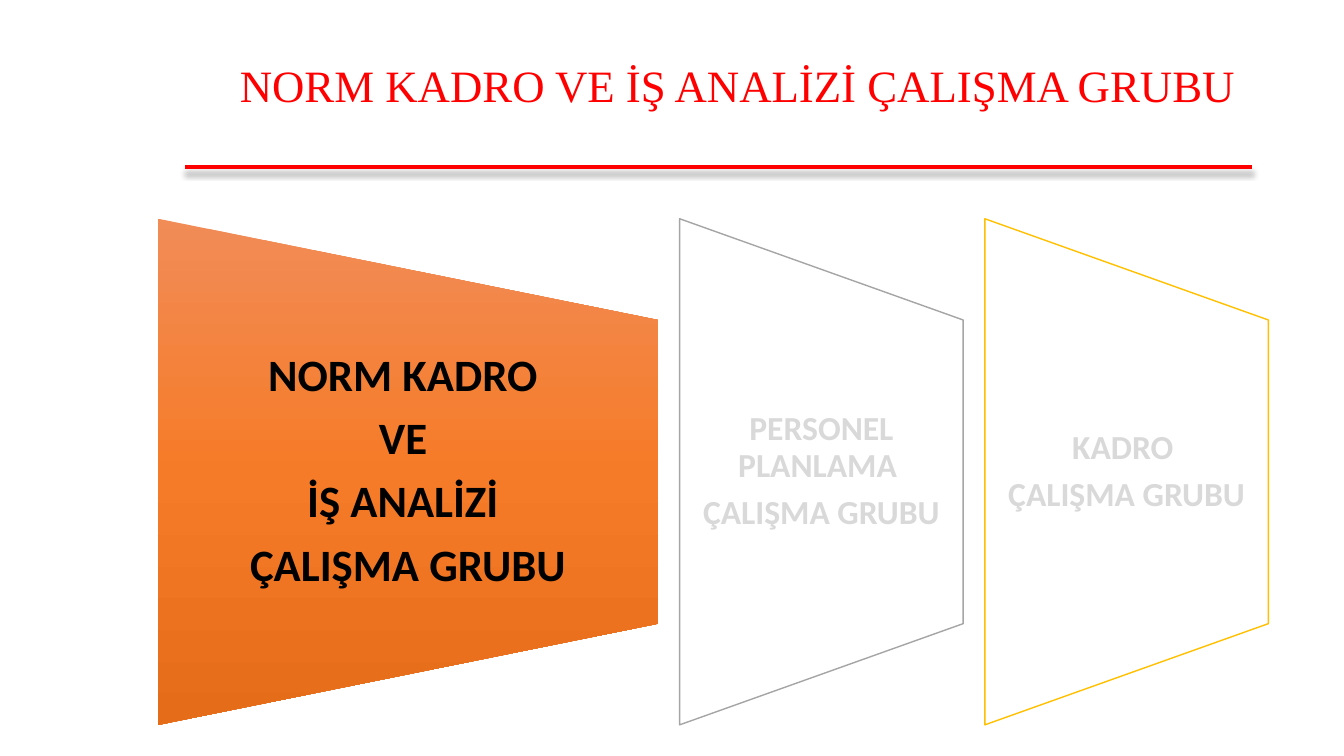
from lxml.etree import SubElement
from pptx import Presentation
from pptx.dml.color import RGBColor
from pptx.enum.shapes import MSO_CONNECTOR, MSO_SHAPE
from pptx.enum.text import MSO_ANCHOR, MSO_AUTO_SIZE, PP_ALIGN
from pptx.oxml.ns import qn
from pptx.util import Pt

RED = RGBColor(0xFF, 0x00, 0x00)
BLACK = RGBColor(0x00, 0x00, 0x00)
WHITE = RGBColor(0xFF, 0xFF, 0xFF)
PALE = RGBColor(0xD9, 0xD9, 0xD9)
GREY = RGBColor(0xA5, 0xA5, 0xA5)
GOLD = RGBColor(0xFF, 0xC0, 0x00)
LIGHT = RGBColor(0xF1, 0x8C, 0x57)
ORANGE = RGBColor(0xF6, 0x7B, 0x28)
DARK = RGBColor(0xE5, 0x6C, 0x19)

TITLE = "NORM KADRO VE İŞ ANALİZİ ÇALIŞMA GRUBU"
GAP = 15.5
PANELS = [
    {"lines": ["NORM KADRO ", "VE ", "İŞ ANALİZİ ", "ÇALIŞMA GRUBU"],
     "wide": 357, "size": 32, "ink": BLACK, "pad": 16, "edge": None},
    {"lines": ["PERSONEL PLANLAMA ", "ÇALIŞMA GRUBU"],
     "wide": 202.5, "size": 24, "ink": PALE, "pad": 12, "edge": GREY},
    {"lines": ["KADRO ", "ÇALIŞMA GRUBU"],
     "wide": 202.5, "size": 24, "ink": PALE, "pad": 12, "edge": GOLD},
]


def apply(item, vals):
    """Set each attribute named in vals on item."""
    for name, val in vals.items():
        setattr(item, name, val)


def place(shape, box):
    """Move a shape to a box given in points."""
    apply(shape, dict(zip(("left", "top", "width", "height"), map(Pt, box))))


def write(frame, lines, size, ink, face, bold, pad, after):
    """Fill a text frame with centred paragraphs."""
    apply(frame, {"word_wrap": True, "auto_size": MSO_AUTO_SIZE.NONE,
                  "vertical_anchor": MSO_ANCHOR.MIDDLE,
                  "margin_left": Pt(pad), "margin_right": Pt(pad),
                  "margin_top": 0, "margin_bottom": 0})
    for i, line in enumerate(lines):
        para = frame.add_paragraph() if i else frame.paragraphs[0]
        apply(para, {"alignment": PP_ALIGN.CENTER, "line_spacing": 0.9,
                     "space_before": Pt(0), "space_after": Pt(after)})
        run = para.add_run()
        run.text = line
        apply(run.font, {"size": Pt(size), "name": face, "bold": bold})
        run.font.color.rgb = ink


def shade(shape):
    """Give a shape the upright three-stop orange gradient."""
    shape.fill.gradient()
    shape.fill.gradient_angle = 270
    grad = shape._element.spPr.find(qn("a:gradFill"))
    grad.set("rotWithShape", "0")
    stops = grad.find(qn("a:gsLst"))
    for stop in list(stops):
        stops.remove(stop)
    for pos, tint in ((0, LIGHT), (50, ORANGE), (100, DARK)):
        stop = SubElement(stops, qn("a:gs"), pos=str(pos * 1000))
        SubElement(stop, qn("a:srgbClr"), val=str(tint))


def header(slide, box):
    """Set the title in its box and the shadowed rule below it."""
    left, top, wide, high = box
    title = slide.shapes.title
    place(title, box)
    write(title.text_frame, [TITLE], 32, RED, "Times New Roman", False, 7.2, 0)
    y = Pt(top + high + 18)
    rule = slide.shapes.add_connector(
        MSO_CONNECTOR.STRAIGHT, Pt(left + wide - 12.5), y, Pt(left - 15), y)
    rule.line.color.rgb = RED
    rule.line.width = Pt(3)
    effect = SubElement(rule._element.spPr, qn("a:effectLst"))
    shadow = SubElement(effect, qn("a:outerShdw"), blurRad=str(Pt(4)),
                        dist=str(Pt(4)), dir="5400000", rotWithShape="0")
    tint = SubElement(shadow, qn("a:srgbClr"), val=str(BLACK))
    SubElement(tint, qn("a:alpha"), val="25000")


def panel(slide, box, lines, size, ink, pad, edge):
    """Draw one turned trapezoid with its text in the given box."""
    left, top, wide, high = box
    shape = slide.shapes.add_shape(
        MSO_SHAPE.FLOWCHART_MANUAL_OPERATION,
        Pt(left + (wide - high) / 2), Pt(top + (high - wide) / 2),
        Pt(high), Pt(wide))
    shape.rotation = 270
    shape.shadow.inherit = False
    if edge is None:
        shade(shape)
        shape.line.fill.background()
    else:
        shape.fill.solid()
        shape.fill.fore_color.rgb = WHITE
        shape.line.color.rgb = edge
        shape.line.width = Pt(1)
    label = slide.shapes.add_textbox(
        Pt(left), Pt(top + high / 5), Pt(wide), Pt(high * 0.6))
    write(label.text_frame, lines, size, ink, "Calibri", True, pad, size * 0.33)


def groups(slide, box):
    """Lay the panels out from left to right with equal gaps."""
    left, top, high = box
    for item in PANELS:
        vals = dict(item)
        wide = vals.pop("wide")
        panel(slide, (left, top, wide, high), **vals)
        left += wide + GAP


def main():
    """Build the slide and save it."""
    deck = Presentation()
    apply(deck, {"slide_width": Pt(960), "slide_height": Pt(540)})
    slide = deck.slides.add_slide(deck.slide_layouts[5])
    header(slide, (147.5, 24.5, 759, 77))
    groups(slide, (113, 156.25, 361.5))
    deck.save("out.pptx")


if __name__ == "__main__":
    main()
